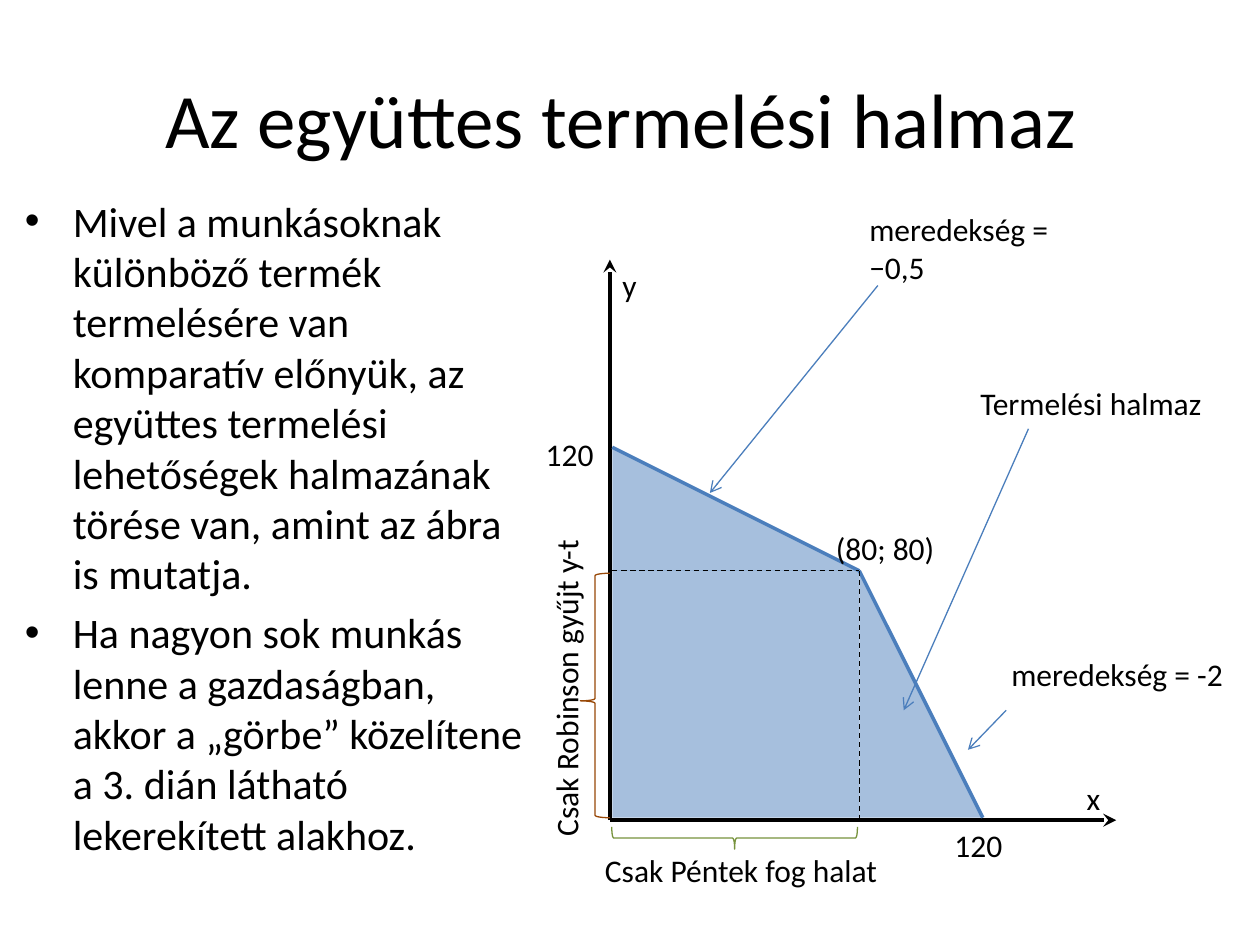
"""Draw the joint production set slide, with its diagram laid out on a grid of 40-unit cells."""
from dataclasses import dataclass

from lxml import etree
from pptx import Presentation
from pptx.dml.color import RGBColor
from pptx.enum.dml import MSO_LINE
from pptx.enum.shapes import MSO_CONNECTOR, MSO_SHAPE
from pptx.enum.text import MSO_ANCHOR, MSO_AUTO_SIZE, PP_ALIGN
from pptx.oxml.ns import qn
from pptx.util import Inches, Pt

STRAIGHT = MSO_CONNECTOR.STRAIGHT
TRIANGLE, RECTANGLE = MSO_SHAPE.RIGHT_TRIANGLE, MSO_SHAPE.RECTANGLE
LEFT_BRACE, RIGHT_BRACE = MSO_SHAPE.LEFT_BRACE, MSO_SHAPE.RIGHT_BRACE
DASH = MSO_LINE.DASH
FONT = "Calibri"
COLORS = {"text": "000000", "area": "4F81BD", "edge": "4B7EBC",
          "robinson": "984807", "friday": "77933C"}
SLIDE_WIDTH, SLIDE_HEIGHT = 10, 7.5
ORIGIN_X, ORIGIN_Y, CELL = 4.86, 6.49, 0.98
BULLET_INDENT = 0.38
TEXT_ROWS = 0.41


@dataclass
class Label:
    text: str
    column: float
    row: float
    columns: float
    rows: float = TEXT_ROWS
    rotation: float = 0


@dataclass
class Stroke:
    start: tuple[float, float]
    end: tuple[float, float]
    color: str
    width: float
    head: str = ""
    dashed: bool = False


@dataclass
class Area:
    preset: MSO_SHAPE
    column: float
    row: float
    columns: float
    rows: float


@dataclass
class Brace(Area):
    color: str
    rotation: float = 0
    adjustments: tuple[float, ...] = ()


TITLE = "Az együttes termelési halmaz "
BULLETS = [
    "Mivel a munkásoknak különböző termék termelésére van komparatív előnyük, "
    "az együttes termelési lehetőségek halmazának törése van, amint az ábra is mutatja.",
    "Ha nagyon sok munkás lenne a gazdaságban, akkor a „görbe” közelítene "
    "a 3. dián látható lekerekített alakhoz.",
]
AREAS = [Area(TRIANGLE, 0, 3, 2, 1), Area(TRIANGLE, 2, 2, 1, 2), Area(RECTANGLE, 0, 2, 2, 2)]
STROKES = [
    Stroke((-0.02, -0.02), (4.08, -0.02), "text", 2.5, "stealth"),
    Stroke((-0.02, -0.02), (-0.02, 4.52), "text", 2.5, "stealth"),
    Stroke((3.37, 3.15), (2.36, 0.87), "edge", 0.75, "arrow"),
    Stroke((2.15, 4.31), (0.79, 2.63), "edge", 0.75, "arrow"),
    Stroke((3.19, 0.87), (2.88, 0.55), "edge", 0.75, "arrow"),
    Stroke((0, 3), (2, 2), "edge", 2),
    Stroke((2, 2), (3, 0), "edge", 2),
    Stroke((0, 2), (2, 2), "text", 0.75, dashed=True),
    Stroke((2, 2), (2, 0), "text", 0.75, dashed=True),
]
BRACES = [
    Brace(LEFT_BRACE, -0.26, 1.98, 0.24, 1.98, "robinson", adjustments=(0.083, 0.522)),
    Brace(RIGHT_BRACE, 0.9, 0.83, 0.18, 1.99, "friday", 90),
]
LABELS = [
    Label("y", -0.02, 4.52, 0.48),
    Label("x", 3.74, 0.36, 0.48),
    Label("120", -0.64, 3.15, 1.29),
    Label("120", 2.67, -0.02, 1.29),
    Label("(80; 80)", 1.71, 2.39, 1.29),
    Label("Termelési halmaz", 2.88, 3.56, 2.13),
    Label("meredekség = -2", 3.13, 1.37, 2.07),
    Label("meredekség = −0,5", 1.98, 4.97, 1.78, 0.72),
    Label("Csak Robinson gyűjt y-t", -1.87, 1.45, 2.99, rotation=270),
    Label("Csak Péntek fog halat", -0.16, -0.22, 2.51),
]


def color(name: str) -> RGBColor:
    """Look up a named colour."""
    return RGBColor.from_string(COLORS[name])


def point(column: float, row: float) -> tuple[int, int]:
    """Turn a grid position, with rows counted upwards, into a slide position."""
    return Inches(ORIGIN_X + column * CELL), Inches(ORIGIN_Y - row * CELL)


def share(left: float, top: float, width: float, height: float) -> tuple[int, ...]:
    """Turn shares of the slide into a frame."""
    return (Inches(left * SLIDE_WIDTH), Inches(top * SLIDE_HEIGHT),
            Inches(width * SLIDE_WIDTH), Inches(height * SLIDE_HEIGHT))


def add_text(page, frame: tuple[int, ...], texts: list[str], size: float):
    """Add a wrapping text box with one paragraph per text."""
    box = page.shapes.add_textbox(*frame)
    box.text_frame.word_wrap = True
    box.text_frame.text = "\n".join(texts)
    for para in box.text_frame.paragraphs:
        para.font.name, para.font.size = FONT, Pt(size)
        para.font.color.rgb = color("text")
    return box


def add_title(page) -> None:
    """Add the centred title."""
    text_frame = add_text(page, share(0.05, 0.04, 0.9, 0.17), [TITLE], 44).text_frame
    text_frame.vertical_anchor = MSO_ANCHOR.MIDDLE
    text_frame.paragraphs[0].alignment = PP_ALIGN.CENTER


def add_bullets(page) -> None:
    """Add the bulleted explanation."""
    box = add_text(page, share(0.01, 0.2, 0.42, 0.75), BULLETS, 24)
    for para in box.text_frame.paragraphs:
        para.space_before = Pt(4.8)
        properties = para._p.get_or_add_pPr()
        properties.set("marL", str(Inches(BULLET_INDENT)))
        properties.set("indent", str(-Inches(BULLET_INDENT)))
        etree.SubElement(properties, qn("a:buFont"), typeface="Arial")
        etree.SubElement(properties, qn("a:buChar"), char="•")


def add_label(page, label: Label) -> None:
    """Add a diagram label."""
    frame = (*point(label.column, label.row),
             Inches(label.columns * CELL), Inches(label.rows * CELL))
    box = add_text(page, frame, [label.text], 18)
    box.text_frame.auto_size = MSO_AUTO_SIZE.SHAPE_TO_FIT_TEXT
    box.rotation = label.rotation


def add_preset(page, area: Area):
    """Add a preset shape on the grid, without shadow."""
    shape = page.shapes.add_shape(area.preset, *point(area.column, area.row),
                                  Inches(area.columns * CELL), Inches(area.rows * CELL))
    shape.shadow.inherit = False
    return shape


def add_area(page, area: Area) -> None:
    """Add a half-transparent part of the production set."""
    shape = add_preset(page, area)
    shape.fill.solid()
    shape.fill.fore_color.rgb = color("area")
    shape.line.fill.background()
    tint = shape._element.spPr.find(f"{qn('a:solidFill')}/{qn('a:srgbClr')}")
    etree.SubElement(tint, qn("a:alpha"), val="50000")


def add_brace(page, brace: Brace) -> None:
    """Add an outlined brace."""
    shape = add_preset(page, brace)
    shape.fill.background()
    shape.line.color.rgb, shape.line.width = color(brace.color), Pt(0.75)
    shape.rotation = brace.rotation
    for index, value in enumerate(brace.adjustments):
        shape.adjustments[index] = value


def add_stroke(page, stroke: Stroke) -> None:
    """Add a line, dashed or with an arrowhead where asked."""
    connector = page.shapes.add_connector(STRAIGHT, *point(*stroke.start), *point(*stroke.end))
    connector.line.color.rgb, connector.line.width = color(stroke.color), Pt(stroke.width)
    if stroke.dashed:
        connector.line.dash_style = DASH
    if stroke.head:
        etree.SubElement(connector.line._get_or_add_ln(), qn("a:tailEnd"), type=stroke.head)
    etree.SubElement(connector._element.spPr, qn("a:effectLst"))


def main() -> None:
    """Build and save the deck."""
    deck = Presentation()
    deck.slide_width, deck.slide_height = Inches(SLIDE_WIDTH), Inches(SLIDE_HEIGHT)
    page = deck.slides.add_slide(deck.slide_layouts[6])
    add_title(page)
    add_bullets(page)
    for items, draw in ((AREAS, add_area), (STROKES, add_stroke),
                        (BRACES, add_brace), (LABELS, add_label)):
        for item in items:
            draw(page, item)
    deck.save("out.pptx")


if __name__ == "__main__":
    main()
